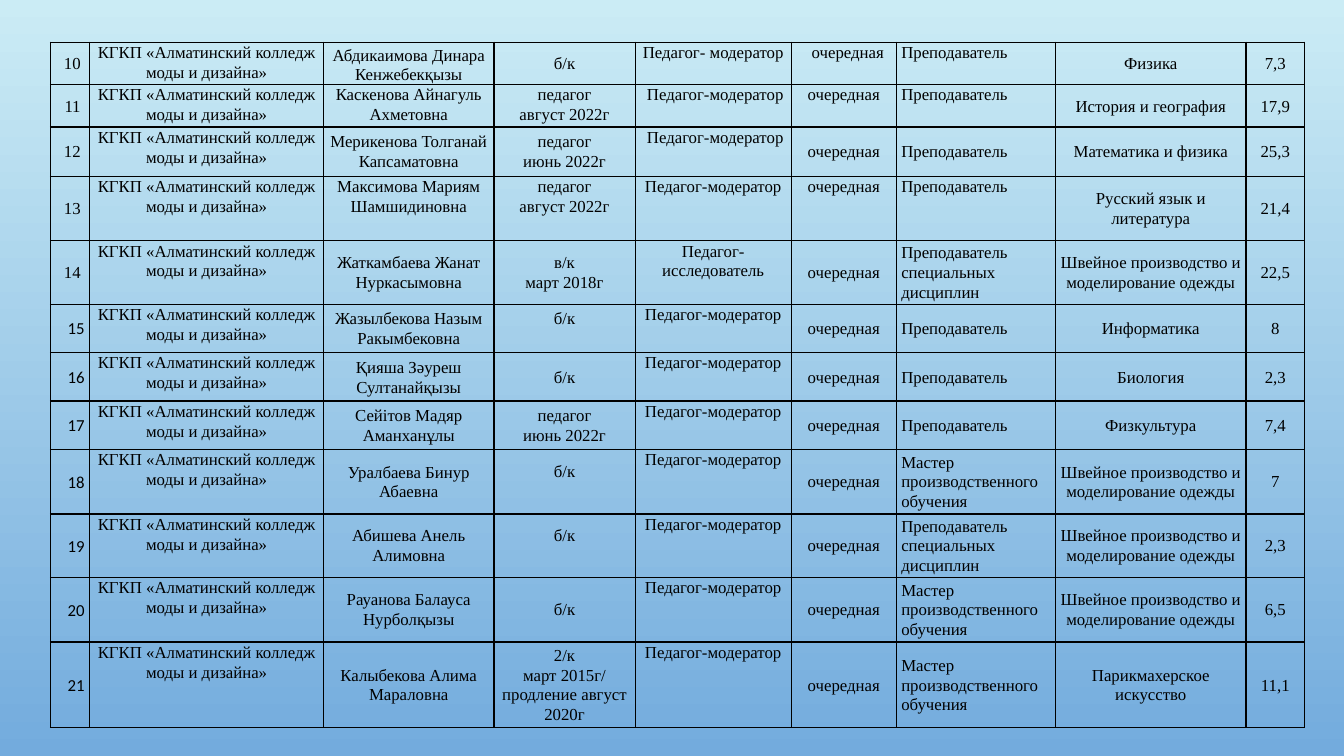
from dataclasses import dataclass

from lxml.etree import SubElement
from pptx import Presentation
from pptx.dml.color import RGBColor
from pptx.enum.text import MSO_ANCHOR, PP_ALIGN
from pptx.oxml.ns import qn
from pptx.util import Inches, Pt


@dataclass(frozen=True)
class Theme:
    sky: str = "CBECF5"
    blue: str = "73ABDD"
    ink: str = "000000"
    font: str = "Times New Roman"
    number_font: str = "Calibri"
    size: int = 12
    border: int = 1
    line_spacing: float = 1.07
    inset: float = 0.05


THEME = Theme()

# Table columns and their widths in inches
NUMBER, COLLEGE, NAME, CURRENT, TARGET, TERM, ROLE, SUBJECT, YEARS = range(9)
COLUMN_WIDTHS = [0.39, 2.32, 1.69, 1.4, 1.55, 1.04, 1.58, 1.89, 0.58]
ROW_HEIGHTS = [0.42, 0.42, 0.49, 0.64, 0.63, 0.48, 0.48, 0.48, 0.64, 0.63, 0.64, 0.85]

# Wording that repeats
FIRST_NUMBER = 10
COLLEGE_NAME = "КГКП «Алматинский колледж моды и дизайна»"
REGULAR = "очередная"
MODERATOR = "Педагог-модератор"
TEACHER = "Преподаватель"
SPECIAL_TEACHER = "Преподаватель специальных дисциплин"
MASTER = "Мастер производственного обучения"
SEWING = "Швейное производство и моделирование одежды"

# Name, current category, target category, role, subject, years of service
TEACHERS = [
    ("Абдикаимова Динара Кенжебекқызы", "б/к", "Педагог- модератор", TEACHER, "Физика", "7,3"),
    ("Каскенова Айнагуль Ахметовна", "педагог\nавгуст 2022г", MODERATOR, TEACHER,
     "История и география", "17,9"),
    ("Мерикенова Толганай Капсаматовна", "педагог\nиюнь 2022г", MODERATOR, TEACHER,
     "Математика и физика", "25,3"),
    ("Максимова Мариям Шамшидиновна", "педагог\nавгуст 2022г", MODERATOR, TEACHER,
     "Русский язык и литература", "21,4"),
    ("Жаткамбаева Жанат Нуркасымовна", "в/к\nмарт 2018г", "Педагог-исследователь",
     SPECIAL_TEACHER, SEWING, "22,5"),
    ("Жазылбекова Назым Ракымбековна", "б/к", MODERATOR, TEACHER, "Информатика", "8"),
    ("Қияша Зәуреш Султанайқызы", "б/к", MODERATOR, TEACHER, "Биология", "2,3"),
    ("Сейітов Мадяр Аманханұлы", "педагог\nиюнь 2022г", MODERATOR, TEACHER,
     "Физкультура", "7,4"),
    ("Уралбаева Бинур Абаевна", "б/к", MODERATOR, MASTER, SEWING, "7"),
    ("Абишева Анель Алимовна", "б/к", MODERATOR, SPECIAL_TEACHER, SEWING, "2,3"),
    ("Рауанова Балауса Нурболқызы", "б/к", MODERATOR, MASTER, SEWING, "6,5"),
    ("Калыбекова Алима Мараловна", "2/к\nмарт 2015г/ продление август 2020г", MODERATOR,
     MASTER, "Парикмахерское искусство", "11,1"),
]

# Cells that depart from middle anchoring, by row number
TOP_COLUMNS = {
    10: {TERM, ROLE},
    11: {NAME, CURRENT, TERM, ROLE},
    13: {NAME, CURRENT, TERM, ROLE},
}
# Extra insets in inches, by row number and column
EXTRA_LEFT = {(10, TERM): 0.08, (11, TARGET): 0.04, (12, TARGET): 0.04}
EXTRA_BOTTOM = {(number, CURRENT): 0.2 for number in (15, 18, 19)}
LAST_INDENTED_NUMBER = 14
NUMBER_INDENT = 0.04


def paint_background(page):
    fill = page.background.fill
    fill.gradient()
    fill.gradient_angle = 270
    for stop, color in zip(fill.gradient_stops, (THEME.sky, THEME.blue)):
        stop.color.rgb = RGBColor.from_string(color)


def draw_borders(cell):
    properties = cell._tc.get_or_add_tcPr()
    for side in ("a:lnL", "a:lnR", "a:lnT", "a:lnB"):
        line = SubElement(properties, qn(side), w=str(Pt(THEME.border)))
        solid = SubElement(line, qn("a:solidFill"))
        SubElement(solid, qn("a:srgbClr"), val=THEME.ink)


def anchor_for(number, column):
    if (number, column) == (10, NAME):
        return MSO_ANCHOR.BOTTOM
    if column in (COLLEGE, TARGET) or column in TOP_COLUMNS.get(number, ()):
        return MSO_ANCHOR.TOP
    return MSO_ANCHOR.MIDDLE


def place_text(cell, number, column):
    indented = column == NUMBER and number <= LAST_INDENTED_NUMBER
    cell.vertical_anchor = anchor_for(number, column)
    cell.margin_left = Inches(THEME.inset + EXTRA_LEFT.get((number, column), 0))
    cell.margin_right = Inches(THEME.inset + (NUMBER_INDENT if indented else 0))
    cell.margin_top = 0
    cell.margin_bottom = Inches(EXTRA_BOTTOM.get((number, column), 0))


def write_text(cell, text, number, column):
    plain_number = column == NUMBER and number > LAST_INDENTED_NUMBER
    frame = cell.text_frame
    frame.text = text
    for para in frame.paragraphs:
        para.alignment = {NUMBER: PP_ALIGN.RIGHT, ROLE: PP_ALIGN.LEFT}.get(
            column, PP_ALIGN.CENTER)
        para.line_spacing = THEME.line_spacing
        para.font.name = THEME.number_font if plain_number else THEME.font
        para.font.size = Pt(THEME.size)
        para.font.color.rgb = RGBColor.from_string(THEME.ink)


def add_teacher_table(page):
    table = page.shapes.add_table(
        len(TEACHERS), len(COLUMN_WIDTHS), Inches(0.5), Inches(0.42),
        Inches(sum(COLUMN_WIDTHS)), Inches(sum(ROW_HEIGHTS))).table
    table.first_row = False
    table.horz_banding = False
    for column, width in zip(table.columns, COLUMN_WIDTHS):
        column.width = Inches(width)
    for row, height in zip(table.rows, ROW_HEIGHTS):
        row.height = Inches(height)

    # One row for each teacher
    for index, (name, current, target, role, subject, years) in enumerate(TEACHERS):
        number = FIRST_NUMBER + index
        texts = (str(number), COLLEGE_NAME, name, current, target, REGULAR, role, subject, years)
        for column, text in enumerate(texts):
            cell = table.cell(index, column)
            draw_borders(cell)
            cell.fill.background()
            place_text(cell, number, column)
            write_text(cell, text, number, column)


def main():
    deck = Presentation()
    deck.slide_width, deck.slide_height = Inches(13.33), Inches(7.5)
    page = deck.slides.add_slide(deck.slide_layouts[6])
    paint_background(page)
    add_teacher_table(page)
    deck.save("out.pptx")


if __name__ == "__main__":
    main()
